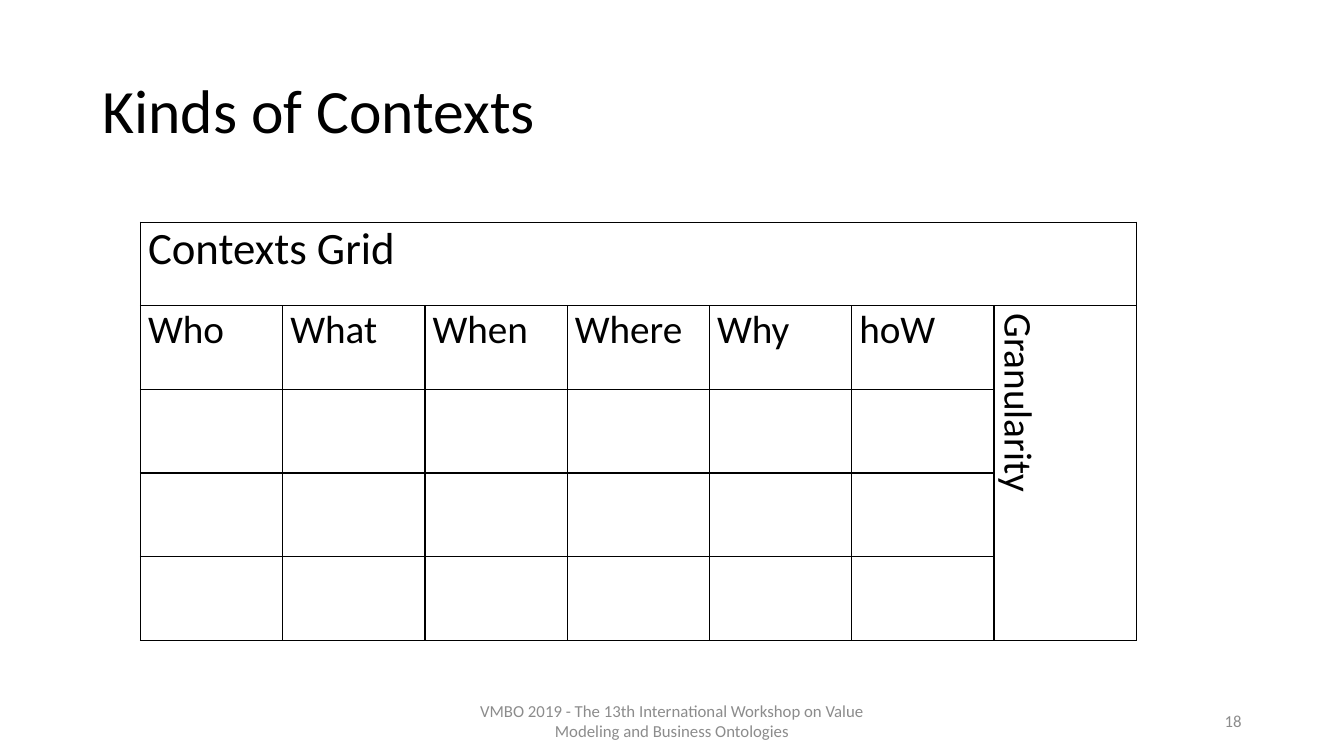
import lxml.etree
import pptx
import pptx.dml.color
import pptx.enum.text
import pptx.oxml.ns
import pptx.util

Cm = pptx.util.Cm
ALIGN = pptx.enum.text.PP_ALIGN
ANCHOR = pptx.enum.text.MSO_ANCHOR
BLACK = "000000"
GREY = "8C8C8C"
QUESTIONS = ["Who", "What", "When", "Where", "Why", "hoW"]
BLANK_ROWS = 3


def colour(hex_string):
    """Return the colour for a hex string."""
    return pptx.dml.color.RGBColor.from_string(hex_string)


def write(frame, wording, size, hex_string, align):
    """Put one formatted paragraph into a text frame."""
    frame.text = wording
    paragraph = frame.paragraphs[0]
    paragraph.alignment = align
    for run in paragraph.runs:
        run.font.size = pptx.util.Pt(size)
        run.font.name = "Calibri"
        run.font.color.rgb = colour(hex_string)


def add_heading(slide, left, top, width, height):
    """Move and format the title placeholder."""
    heading = slide.shapes.title
    heading.left, heading.top = left, top
    heading.width, heading.height = width, height
    frame = heading.text_frame
    frame.word_wrap = True
    frame.auto_size = pptx.enum.text.MSO_AUTO_SIZE.NONE
    frame.vertical_anchor = ANCHOR.MIDDLE
    write(frame, "Kinds of Contexts", 44, BLACK, ALIGN.LEFT)
    frame.paragraphs[0].line_spacing = 0.9


def add_footer_text(slide, wording, align, left, top, width, height):
    """Add one small grey text of the footer."""
    frame = slide.shapes.add_textbox(left, top, width, height).text_frame
    frame.word_wrap = True
    frame.vertical_anchor = ANCHOR.MIDDLE
    write(frame, wording, 12, GREY, align)


def draw_borders(cell, hex_string, points):
    """Draw a solid line on all four sides of a cell."""
    properties = cell._tc.get_or_add_tcPr()
    for index, side in enumerate(["lnL", "lnR", "lnT", "lnB"]):
        line = lxml.etree.Element(pptx.oxml.ns.qn(f"a:{side}"), w=str(pptx.util.Pt(points)))
        fill = lxml.etree.SubElement(line, pptx.oxml.ns.qn("a:solidFill"))
        lxml.etree.SubElement(fill, pptx.oxml.ns.qn("a:srgbClr"), val=hex_string)
        properties.insert(index, line)


def add_contexts_grid(slide, left, top, width, height):
    """Add the table of contexts with its granularity column."""
    row_count, column_count = BLANK_ROWS + 2, len(QUESTIONS) + 1
    grid = slide.shapes.add_table(row_count, column_count, left, top, width, height).table
    grid.first_row = grid.horz_banding = False
    for cell in grid.iter_cells():
        cell.fill.background()
        cell.margin_left = cell.margin_right = Cm(0.19)
        cell.margin_top = cell.margin_bottom = 0
        draw_borders(cell, BLACK, 1)

    banner = grid.cell(0, 0)
    banner.merge(grid.cell(0, column_count - 1))
    write(banner.text_frame, "Contexts Grid", 32, BLACK, ALIGN.JUSTIFY)

    for column, question in enumerate(QUESTIONS):
        write(grid.cell(1, column).text_frame, question, 28, BLACK, ALIGN.JUSTIFY)

    granularity = grid.cell(1, column_count - 1)
    granularity.merge(grid.cell(row_count - 1, column_count - 1))
    write(granularity.text_frame, "Granularity", 28, BLACK, ALIGN.JUSTIFY)
    granularity._tc.get_or_add_tcPr().set("vert", "vert")


def main():
    """Build the slide and save it."""
    deck = pptx.Presentation()
    deck.slide_width, deck.slide_height = Cm(33.87), Cm(19.05)
    slide = deck.slides.add_slide(deck.slide_layouts[5])
    add_heading(slide, Cm(2.33), Cm(1.01), Cm(29.21), Cm(3.68))
    add_footer_text(
        slide,
        "VMBO 2019 - The 13th International Workshop on Value Modeling and Business Ontologies",
        ALIGN.CENTER, Cm(11.22), Cm(17.66), Cm(11.43), Cm(1.01),
    )
    add_footer_text(slide, "18", ALIGN.RIGHT, Cm(23.92), Cm(17.66), Cm(7.62), Cm(1.01))
    add_contexts_grid(slide, Cm(3.54), Cm(5.6), Cm(25.1), Cm(10.53))
    deck.save("out.pptx")


if __name__ == "__main__":
    main()
